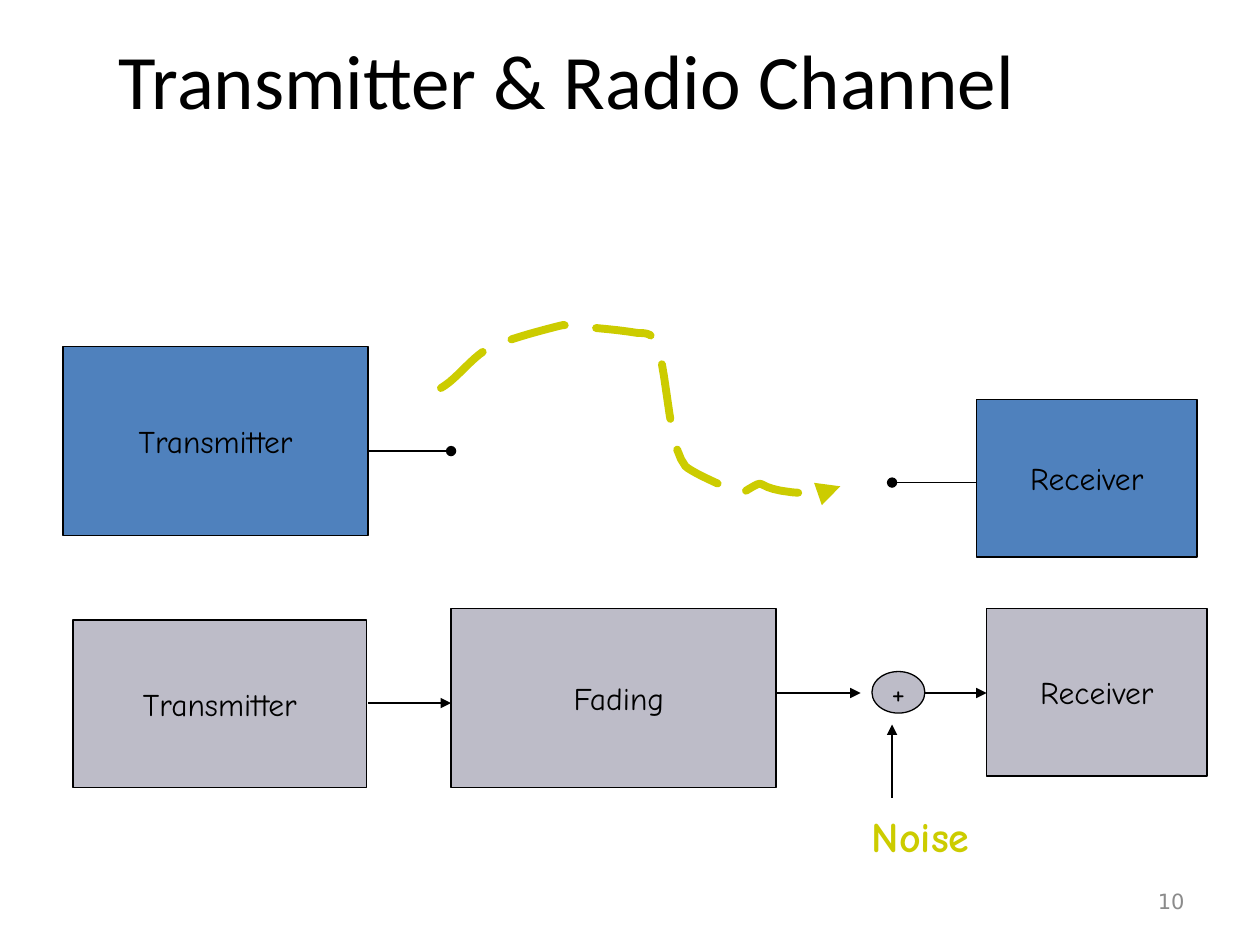
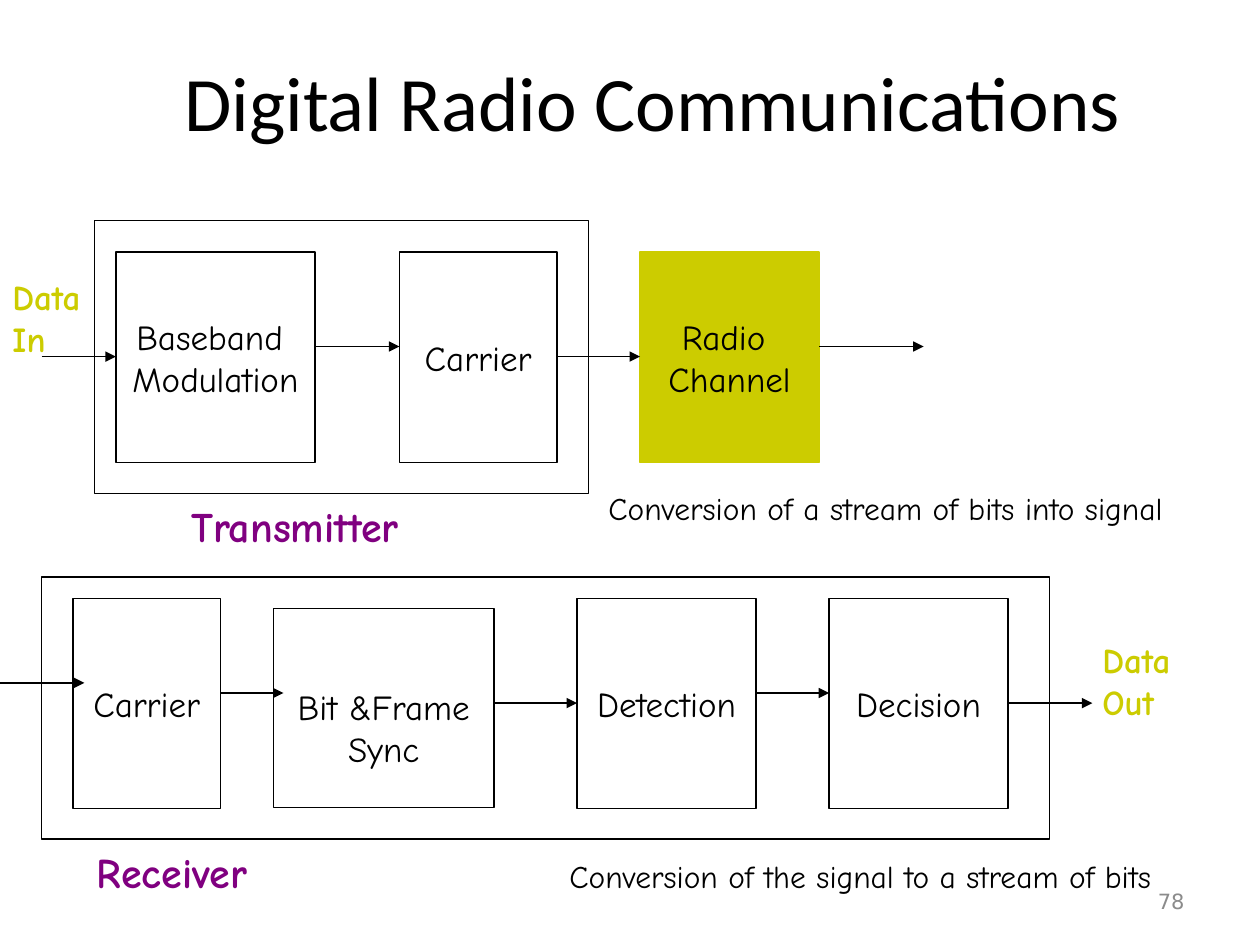
from lxml import etree
from pptx import Presentation
from pptx.dml.color import RGBColor
from pptx.enum import dml, shapes, text
from pptx.oxml.ns import qn
from pptx.util import Inches, Pt

BLACK = RGBColor(0x00, 0x00, 0x00)
BLUE = RGBColor(0x4F, 0x81, 0xBD)
GREY = RGBColor(0xBD, 0xBC, 0xC8)
LIME = RGBColor(0xCC, 0xCC, 0x00)
PURPLE = RGBColor(0x80, 0x00, 0x80)
NUMBER_GREY = RGBColor(0x8B, 0x8B, 0x8B)
TITLE_FONT, LABEL_FONT, NUMBER_FONT = "Calibri", "Comic Neue", "DejaVu Sans"
RECTANGLE = shapes.MSO_SHAPE.RECTANGLE
LEFT, CENTER, RIGHT = text.PP_ALIGN.LEFT, text.PP_ALIGN.CENTER, text.PP_ALIGN.RIGHT

RADIO_PATH_START = (3.5, 3.08)
RADIO_PATH_CURVES = [
    ((3.64, 3), (3.76, 2.81), (3.91, 2.75)),
    ((4.09, 2.67), (4.47, 2.58), (4.47, 2.58)),
    ((4.66, 2.6), (4.85, 2.61), (5.04, 2.64)),
    ((5.09, 2.65), (5.15, 2.63), (5.19, 2.69)),
    ((5.3, 2.86), (5.29, 3.52), (5.44, 3.7)),
    ((5.5, 3.76), (5.84, 3.9), (5.88, 3.92)),
    ((6.18, 3.74), (5.84, 3.92), (6.57, 3.92)),
    ((6.6, 3.92), (6.67, 3.86), (6.67, 3.86)),
]


def inches(values):
    return [Inches(value) for value in values]


def write(shape, content, size, color=BLACK, font=LABEL_FONT, align=CENTER, bold=False):
    frame = shape.text_frame
    frame.text = content
    for paragraph in frame.paragraphs:
        paragraph.alignment = align
        for run in paragraph.runs:
            run.font.size = Pt(size)
            run.font.name = font
            run.font.bold = bold
            run.font.color.rgb = color


def add_titled_slide(presentation, title, title_box, number):
    slide = presentation.slides.add_slide(presentation.slide_layouts[5])
    heading = slide.shapes.title
    heading.left, heading.top, heading.width, heading.height = inches(title_box)
    write(heading, title, 44, font=TITLE_FONT)
    heading.text_frame.vertical_anchor = text.MSO_ANCHOR.MIDDLE
    page = slide.shapes.add_textbox(*inches((7.17, 6.95, 2.33, 0.4)))
    page.text_frame.vertical_anchor = text.MSO_ANCHOR.MIDDLE
    write(page, number, 12, NUMBER_GREY, NUMBER_FONT, RIGHT)
    return slide


def add_block(slide, box, label="", size=20, fill=None, line=BLACK, kind=RECTANGLE):
    block = slide.shapes.add_shape(kind, *inches(box))
    block.shadow.inherit = False
    if fill is None:
        block.fill.background()
    else:
        block.fill.solid()
        block.fill.fore_color.rgb = fill
    block.line.color.rgb = line
    block.line.width = Pt(0.75)
    if label:
        block.text_frame.word_wrap = False
        block.text_frame.vertical_anchor = text.MSO_ANCHOR.MIDDLE
        write(block, label, size)
    return block


def add_label(slide, box, label, size, color=BLACK, bold=True):
    shape = slide.shapes.add_textbox(*inches(box))
    shape.text_frame.word_wrap = False
    write(shape, label, size, color, align=LEFT, bold=bold)


def add_line_end(shape, end):
    etree.SubElement(shape.line._get_or_add_ln(), qn("a:tailEnd"), type=end)


def add_link(slide, start, finish, end="triangle"):
    link = slide.shapes.add_connector(shapes.MSO_CONNECTOR.STRAIGHT, *inches(start + finish))
    link.line.color.rgb = BLACK
    link.line.width = Pt(0.75)
    add_line_end(link, end)
    etree.SubElement(link._element.spPr, qn("a:effectLst"))


def curve_points(start, curves, steps=12):
    """Points along a chain of cubic Bezier curves, without the start."""
    points = []
    for first, second, finish in curves:
        for step in range(1, steps + 1):
            t = step / steps
            weights = ((1 - t) ** 3, 3 * t * (1 - t) ** 2, 3 * t * t * (1 - t), t ** 3)
            corners = (start, first, second, finish)
            points.append(tuple(
                sum(weight * corner[axis] for weight, corner in zip(weights, corners))
                for axis in (0, 1)))
        start = finish
    return points


def add_radio_path(slide):
    builder = slide.shapes.build_freeform(*inches(RADIO_PATH_START))
    points = curve_points(RADIO_PATH_START, RADIO_PATH_CURVES)
    builder.add_line_segments([inches(point) for point in points], close=False)
    radio_path = builder.convert_to_shape()
    radio_path.shadow.inherit = False
    radio_path.fill.background()
    radio_path.line.color.rgb = LIME
    radio_path.line.width = Pt(4.5)
    radio_path.line.dash_style = dml.MSO_LINE.LONG_DASH
    outline = radio_path.line._get_or_add_ln()
    outline.set("cap", "rnd")
    etree.SubElement(outline, qn("a:round"))
    add_line_end(radio_path, "triangle")


def build_channel_slide(presentation):
    slide = add_titled_slide(presentation, "Transmitter & Radio Channel", (0, 0, 9, 1.25), "10")
    for box, label, fill in [
        ((0.5, 2.75, 2.42, 1.5), "Transmitter", BLUE),
        ((7.75, 3.17, 1.75, 1.25), "Receiver", BLUE),
        ((0.58, 4.92, 2.33, 1.33), "Transmitter", GREY),
        ((3.58, 4.83, 2.58, 1.42), " Fading", GREY),
        ((7.83, 4.83, 1.75, 1.33), "Receiver", GREY),
    ]:
        add_block(slide, box, label, 18, fill)
    add_block(slide, (6.92, 5.33, 0.42, 0.33), "+", 18, GREY, kind=shapes.MSO_SHAPE.OVAL)

    add_link(slide, (2.92, 3.58), (3.58, 3.58), "oval")
    add_link(slide, (7.75, 3.83), (7.08, 3.83), "oval")
    add_radio_path(slide)
    for start, finish in [
        ((2.92, 5.58), (3.58, 5.58)),
        ((6.17, 5.5), (6.83, 5.5)),
        ((7.33, 5.5), (7.83, 5.5)),
        ((7.08, 6.33), (7.08, 5.75)),
    ]:
        add_link(slide, start, finish)
    add_label(slide, (6.82, 6.38, 1.09, 0.5), "Noise", 24, LIME)


def build_communications_slide(presentation):
    slide = add_titled_slide(
        presentation, "Digital Radio Communications", (0.92, 0, 8.52, 1.6), "78")
    for frame in [(0.75, 1.75, 3.92, 2.17), (0.33, 4.58, 8, 2.08)]:
        add_block(slide, frame)
    for box, label in [
        ((0.92, 2, 1.58, 1.67), "Baseband \nModulation"),
        ((3.17, 2, 1.25, 1.67), "Carrier"),
        ((0.58, 4.75, 1.17, 1.67), "Carrier"),
        ((4.58, 4.75, 1.42, 1.67), "Detection"),
        ((6.58, 4.75, 1.42, 1.67), "Decision"),
    ]:
        add_block(slide, box, label)
    add_block(slide, (5.08, 2, 1.42, 1.67), "Radio \nChannel", fill=LIME, line=LIME)
    sync = add_block(slide, (2.17, 4.83, 1.75, 1.58), "Bit &Frame\nSync")
    sync.text_frame.margin_top = Inches(0.35)

    for left, right, y in [
        (0.33, 0.92, 2.83), (2.5, 3.17, 2.75), (4.42, 5.08, 2.83), (6.5, 7.33, 2.75),
        (0, 0.67, 5.42), (1.75, 2.25, 5.5), (3.92, 4.58, 5.58), (6, 6.58, 5.5),
        (8, 8.67, 5.58),
    ]:
        add_link(slide, (left, y), (right, y))

    add_label(slide, (1.42, 3.92, 2.12, 0.5), "Transmitter", 24, PURPLE)
    add_label(slide, (0.67, 6.67, 1.56, 0.5), "Receiver", 24, PURPLE)
    add_label(slide, (0, 2.14, 0.84, 0.77), "Data\nIn", 20, LIME)
    add_label(slide, (8.65, 5.02, 0.84, 0.77), "Data\nOut", 20, LIME)
    add_label(slide, (4.73, 3.83, 5, 0.4),
              "Conversion of a stream of bits into signal", 18, bold=False)
    add_label(slide, (4.42, 6.75, 5.27, 0.4),
              "Conversion of the signal to a stream of bits", 18, bold=False)


def main():
    presentation = Presentation()
    presentation.slide_width, presentation.slide_height = inches((10, 7.5))
    build_channel_slide(presentation)
    build_communications_slide(presentation)
    presentation.save("out.pptx")


if __name__ == "__main__":
    main()
